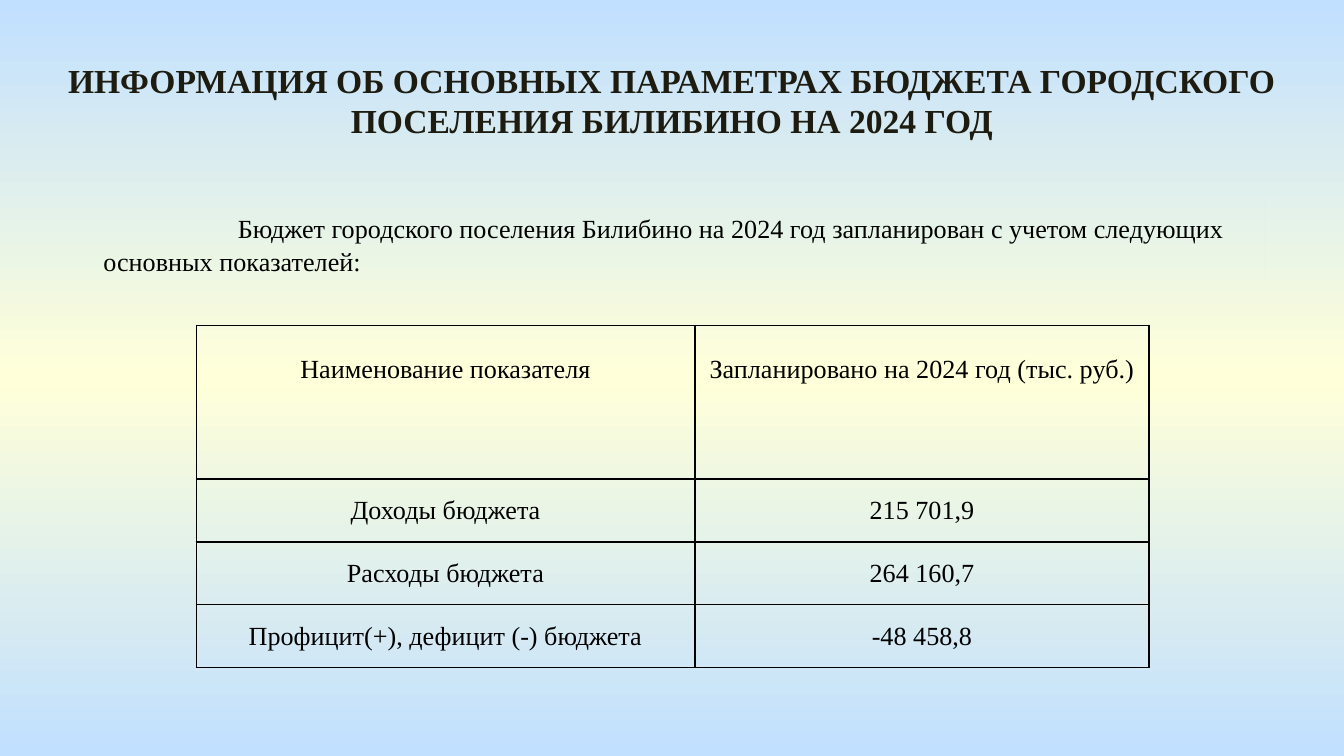
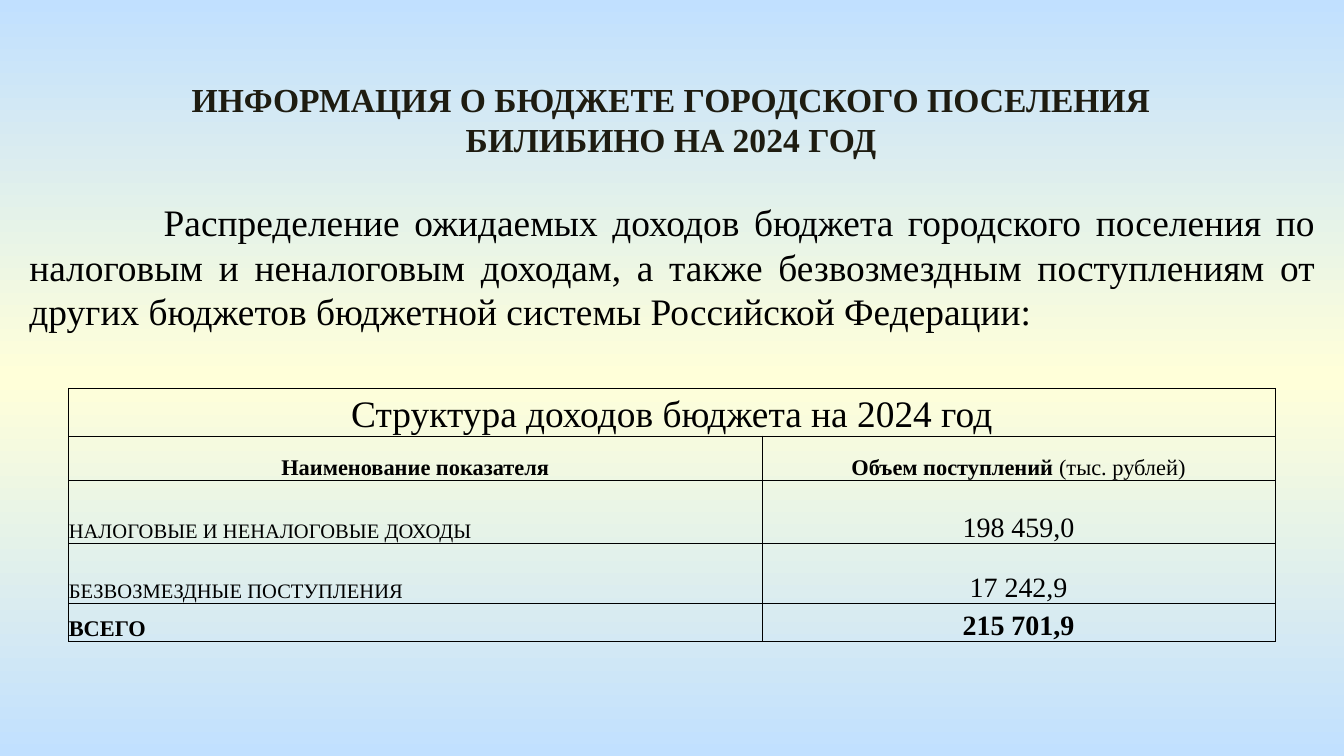
from copy import deepcopy

from pptx import Presentation
from pptx.dml.color import RGBColor
from pptx.enum.text import MSO_ANCHOR, MSO_AUTO_SIZE, PP_ALIGN
from pptx.oxml import parse_xml
from pptx.oxml.ns import nsdecls, qn
from pptx.util import Cm, Pt

HUES = {"sky": "C1E0FF", "cream": "FFFFD9", "title": "1E1C11", "ink": "000000"}
FONT = "Times New Roman"
LEFT, MID, FULL = PP_ALIGN.LEFT, PP_ALIGN.CENTER, PP_ALIGN.JUSTIFY


def hue(name):
    return RGBColor.from_string(HUES[name])


def write(par, text, size=14, bold=False, color="ink", align=MID):
    par.alignment = align
    run = par.add_run()
    run.text = text
    font = run.font
    font.name, font.size, font.bold = FONT, Pt(size), bold
    font.color.rgb = hue(color)


class Deck:
    def __init__(self):
        self.file = Presentation()
        self.file.slide_width, self.file.slide_height = Cm(25.4), Cm(14.29)
        self.slide = None
        self.paint()

    def paint(self):
        master = self.file.slide_master
        fill = master.background.fill
        fill.gradient()
        fill.gradient_angle = 270
        first, last = fill.gradient_stops
        first.color.rgb, first.position = hue("sky"), 0
        last.color.rgb, last.position = hue("cream"), 0.5
        stops = master._element.find(".//" + qn("a:gsLst"))
        end = deepcopy(stops[0])
        end.set("pos", "100000")
        stops.append(end)

    def page(self):
        self.slide = self.file.slides.add_slide(self.file.slide_layouts[1])

    def place(self, shape, box):
        shape.left, shape.top, shape.width, shape.height = map(Cm, box)
        frame = shape.text_frame
        frame.word_wrap = True
        frame.auto_size = MSO_AUTO_SIZE.NONE
        return frame

    def title(self, text, box):
        frame = self.place(self.slide.shapes.title, box)
        write(frame.paragraphs[0], text, size=18, bold=True, color="title")

    def intro(self, text, box, top=0.13, space=1.0, **style):
        shape = self.slide.placeholders[1]
        shape._element.set("useBgFill", "1")
        frame = self.place(shape, box)
        frame.margin_top = Cm(top)
        par = frame.paragraphs[0]
        par.line_spacing, par.space_before = space, Pt(0)
        props = par._p.get_or_add_pPr()
        props.set("marL", "0")
        props.set("indent", str(Cm(2.54)))
        props.append(parse_xml(f"<a:buNone {nsdecls('a')}/>"))
        write(par, text, **style)

    def table(self, spot, cols, rows, data, line, inset=0.0):
        left, top = map(Cm, spot)
        frame = self.slide.shapes.add_table(
            len(rows), len(cols), left, top, Cm(sum(cols)), Cm(sum(rows)))
        grid = frame.table
        grid.first_row = grid.horz_banding = False
        for col, width in zip(grid.columns, cols):
            col.width = Cm(width)
        for row, height in zip(grid.rows, rows):
            row.height = Cm(height)
        for r, items in enumerate(data):
            if len(items) < len(cols):
                grid.cell(r, 0).merge(grid.cell(r, len(cols) - 1))
            for c in range(len(cols)):
                cell = grid.cell(r, c)
                self.edge(cell, line)
                cell.margin_left = cell.margin_right = Cm(inset)
                cell.margin_top = cell.margin_bottom = 0
                for text, style in items[c] if c < len(items) else []:
                    write(cell.text_frame.paragraphs[0], text, **style)
        return grid

    def edge(self, cell, line):
        props = cell._tc.get_or_add_tcPr()
        for side in "LRTB":
            props.append(parse_xml(
                f'<a:ln{side} {nsdecls("a")} w="{Pt(line)}"><a:solidFill>'
                f'<a:srgbClr val="{HUES["ink"]}"/></a:solidFill></a:ln{side}>'))
        cell.fill.background()


def anchor(grid, head, rest):
    for r, row in enumerate(grid.rows):
        for cell in row.cells:
            cell.vertical_anchor = rest if r else head


def plan(deck):
    deck.page()
    deck.title("ИНФОРМАЦИЯ ОБ ОСНОВНЫХ ПАРАМЕТРАХ БЮДЖЕТА ГОРОДСКОГО "
               "ПОСЕЛЕНИЯ БИЛИБИНО НА 2024 ГОД", (0.89, 0.99, 23.62, 1.8))
    deck.intro("Бюджет городского поселения Билибино на 2024 год запланирован "
               "с учетом следующих основных показателей:",
               (1.7, 3.71, 22.2, 1.63), top=0.25, space=1.08, align=LEFT)
    pairs = [
        ("Наименование показателя", "Запланировано на 2024 год (тыс. руб.)"),
        ("Доходы бюджета", "215 701,9"),
        ("Расходы бюджета", "264 160,7"),
        ("Профицит(+), дефицит (-) бюджета", "-48 458,8"),
    ]
    data = [[[(text, {})] for text in pair] for pair in pairs]
    grid = deck.table((3.71, 6.15), (9.42, 8.59), (2.9, 1.19, 1.19, 1.19),
                      data, 1, inset=0.18)
    anchor(grid, MSO_ANCHOR.TOP, MSO_ANCHOR.MIDDLE)
    for cell in grid.rows[0].cells:
        cell.margin_top = Cm(0.57)


def income(deck):
    deck.page()
    deck.title("ИНФОРМАЦИЯ О БЮДЖЕТЕ ГОРОДСКОГО ПОСЕЛЕНИЯ БИЛИБИНО НА 2024 ГОД",
               (2.87, 1.35, 19.63, 1.8))
    deck.intro("Распределение ожидаемых доходов бюджета городского поселения по "
               "налоговым и неналоговым доходам, а также безвозмездным "
               "поступлениям от других бюджетов бюджетной системы "
               "Российской Федерации:",
               (0.3, 3.63, 24.82, 2.82), size=20, align=FULL)
    head = {"size": 12, "bold": True}
    name = {"size": 11, "align": LEFT}
    sum_ = {"size": 15}
    data = [
        [[("Структура доходов бюджета на 2024 год", {"size": 20})]],
        [[("Наименование показателя", head)],
         [("Объем поступлений ", head), ("(тыс. рублей)", {"size": 12})]],
        [[("НАЛОГОВЫЕ И НЕНАЛОГОВЫЕ ДОХОДЫ", name)], [("198 459,0", sum_)]],
        [[("БЕЗВОЗМЕЗДНЫЕ ПОСТУПЛЕНИЯ", name)], [("17 242,9", sum_)]],
        [[("ВСЕГО", {**head, "align": LEFT})],
         [("215 701,9", {**sum_, "bold": True})]],
    ]
    grid = deck.table((1.3, 7.34), (13.1, 9.7), (0.9, 0.85, 1.18, 1.13, 0.72),
                      data, 0.5)
    anchor(grid, MSO_ANCHOR.BOTTOM, MSO_ANCHOR.BOTTOM)


def main():
    deck = Deck()
    plan(deck)
    income(deck)
    deck.file.save("out.pptx")


if __name__ == "__main__":
    main()
